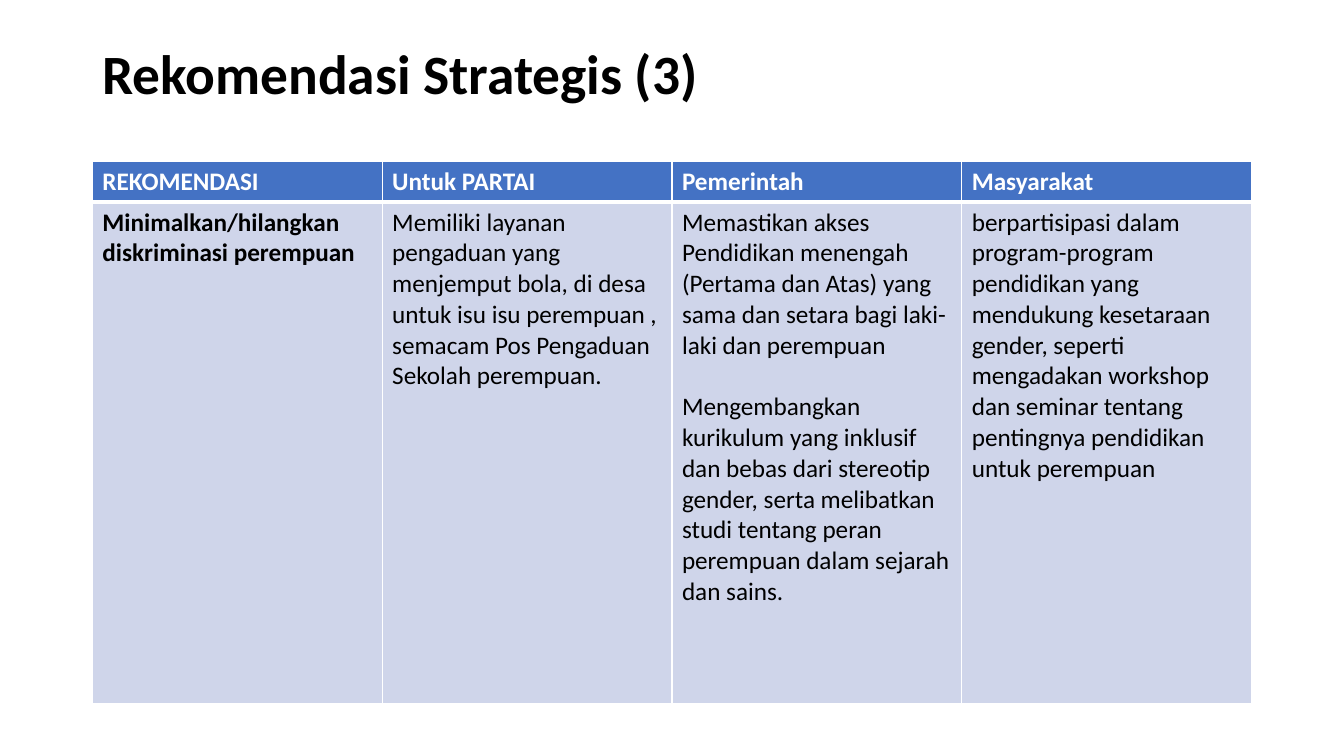
from dataclasses import dataclass

from lxml import etree
from pptx import Presentation
from pptx.dml.color import RGBColor
from pptx.enum.text import MSO_ANCHOR
from pptx.oxml.ns import qn
from pptx.util import Pt

MIDDLE = MSO_ANCHOR.MIDDLE


@dataclass(frozen=True)
class Theme:
    font: str = "Calibri"
    black: str = "000000"
    white: str = "FFFFFF"
    header_fill: str = "4472C4"
    body_fill: str = "CFD5EA"
    title_size: float = 39.6
    table_size: float = 18


theme = Theme()


def add_text(paragraph, text, size, color, bold):
    run = paragraph.add_run()
    run.text = text
    run.font.name = theme.font
    run.font.size = Pt(size)
    run.font.bold = bold
    run.font.color.rgb = RGBColor.from_string(color)


def set_borders(cell, widths):
    properties = cell._tc.get_or_add_tcPr()
    for position, (side, width) in enumerate(widths.items()):
        line = etree.Element(qn(f"a:{side}"), w=str(Pt(width)))
        fill = etree.SubElement(line, qn("a:solidFill"))
        etree.SubElement(fill, qn("a:srgbClr"), val=theme.white)
        properties.insert(position, line)


presentation = Presentation()
presentation.slide_width = Pt(960)
presentation.slide_height = Pt(540)
slide = presentation.slides.add_slide(presentation.slide_layouts[6])

title = slide.shapes.add_textbox(Pt(66), Pt(28.8), Pt(828), Pt(52))
title_frame = title.text_frame
title_frame.word_wrap = True
title_frame.vertical_anchor = MIDDLE
title_paragraph = title_frame.paragraphs[0]
title_paragraph.line_spacing = 0.9
add_text(title_paragraph, "Rekomendasi Strategis (3)", theme.title_size, theme.black, True)

headers = ["REKOMENDASI", "Untuk PARTAI", "Pemerintah", "Masyarakat"]
recommendations = [
    ["Minimalkan/hilangkan diskriminasi perempuan"],
    [
        "Memiliki layanan pengaduan yang menjemput bola, di desa untuk isu isu "
        "perempuan , semacam Pos Pengaduan Sekolah perempuan."
    ],
    [
        "Memastikan akses Pendidikan menengah (Pertama dan Atas) yang sama dan "
        "setara bagi laki-laki dan perempuan",
        "Mengembangkan kurikulum yang inklusif dan bebas dari stereotip gender, "
        "serta melibatkan studi tentang peran perempuan dalam sejarah dan sains.",
    ],
    [
        "berpartisipasi dalam program-program pendidikan yang mendukung kesetaraan "
        "gender, seperti mengadakan workshop dan seminar tentang pentingnya "
        "pendidikan untuk perempuan"
    ],
]
rows = [[[header] for header in headers], recommendations]
row_heights = [29.2, 358.4]
row_fills = [theme.header_fill, theme.body_fill]
row_colors = [theme.white, theme.black]
row_borders = [
    {"lnL": 1, "lnR": 1, "lnT": 1, "lnB": 3},
    {"lnL": 1, "lnR": 1, "lnT": 3, "lnB": 1},
]

table = slide.shapes.add_table(
    len(rows), len(headers), Pt(66), Pt(115.2), Pt(828), Pt(sum(row_heights))
).table
table.horz_banding = False

for row_index, row in enumerate(rows):
    table.rows[row_index].height = Pt(row_heights[row_index])
    for column_index, texts in enumerate(row):
        cell = table.cell(row_index, column_index)
        cell.fill.solid()
        cell.fill.fore_color.rgb = RGBColor.from_string(row_fills[row_index])
        set_borders(cell, row_borders[row_index])
        bold = row_index == 0 or column_index == 0
        for text_index, text in enumerate(texts):
            if text_index == 0:
                paragraph = cell.text_frame.paragraphs[0]
            else:
                paragraph = cell.text_frame.add_paragraph()
                paragraph.space_before = Pt(22)
            add_text(paragraph, text, theme.table_size, row_colors[row_index], bold)

presentation.save("out.pptx")
